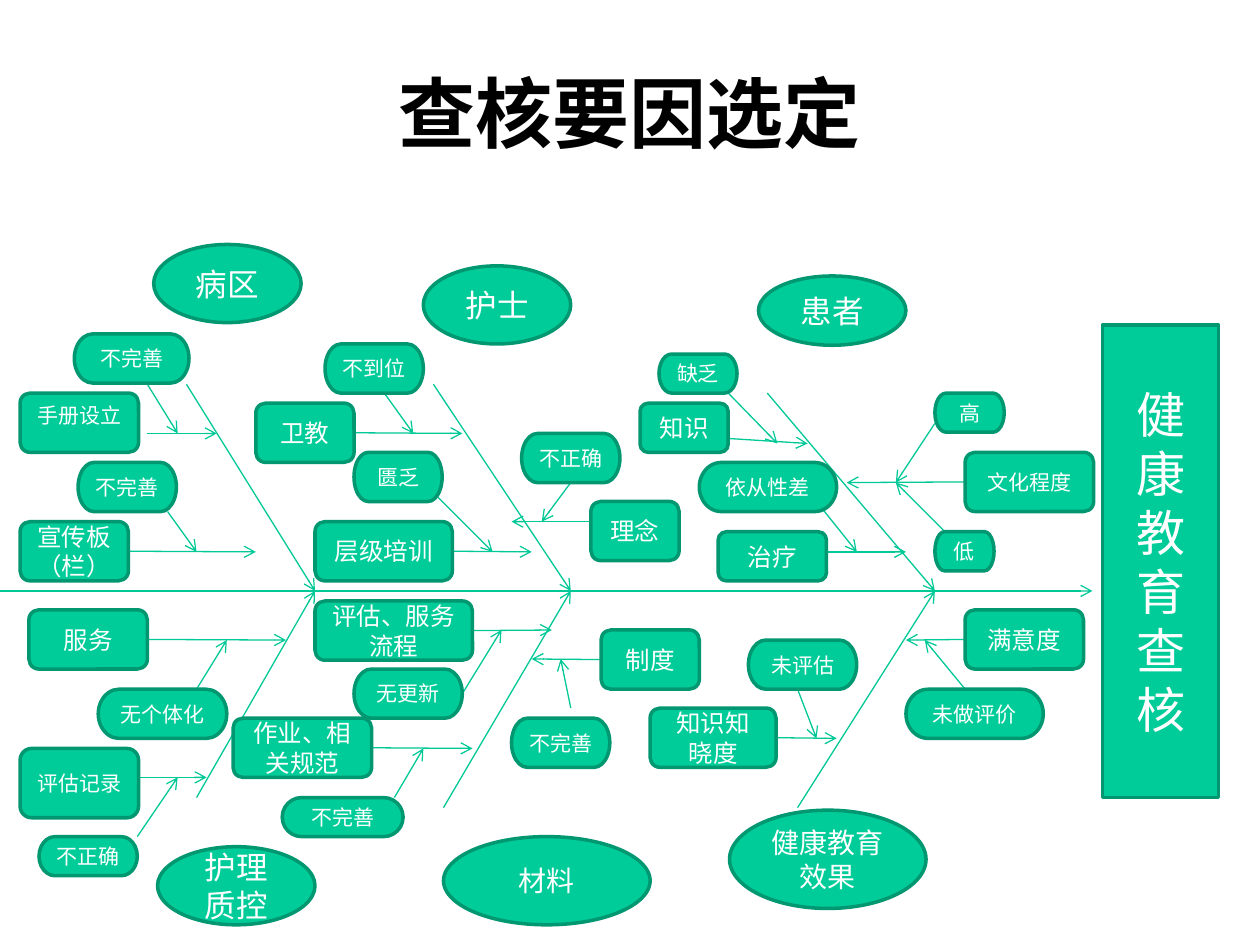
from lxml import etree
from pptx import Presentation
from pptx import util as u
from pptx.dml import color
from pptx.enum import shapes, text
from pptx.oxml import ns

NOTO = "Noto Sans CJK SC"
TIMES = "Times New Roman"
SPINE_Y = 4.69

CATEGORIES = [
    ("患者", (6.02, 2.19, 1.17, 0.55), 18, TIMES, (6.09, 3.12), 7.42),
    ("护士", (3.36, 2.11, 1.17, 0.62), 18, TIMES, (3.44, 3.05), 4.53),
    ("病区", (1.22, 1.94, 1.17, 0.62), 18, NOTO, (1.48, 3.05), 2.5),
    ("健康教育效果", (5.79, 6.43, 1.56, 0.78), 16, NOTO, (6.33, 6.41), 7.42),
    ("材料", (3.52, 6.64, 1.64, 0.7), 16, NOTO, (3.52, 6.41), 4.53),
    ("护理质控", (1.25, 6.72, 1.25, 0.62), 18, NOTO, (1.56, 6.33), 2.5),
]

CAUSES = [
    ("文化程度", (7.66, 3.59, 1.02, 0.47), 12, TIMES, (7.66, 3.83), (6.72, 3.83)),
    ("知识", (5.08, 3.2, 0.7, 0.39), 14, TIMES, (5.78, 3.48), (6.41, 3.52)),
    ("治疗", (5.7, 4.22, 0.86, 0.39), 14, NOTO, (6.56, 4.38), (7.19, 4.38)),
    ("理念", (4.69, 3.98, 0.7, 0.47), 14, TIMES, (4.69, 4.14), (4.06, 4.14)),
    ("层级培训", (2.5, 4.14, 1.09, 0.47), 14, TIMES, (3.59, 4.38), (4.22, 4.38)),
    ("卫教", (2.03, 3.2, 0.78, 0.47), 14, TIMES, (2.81, 3.44), (3.67, 3.44)),
    ("宣传板（栏）", (0.16, 4.14, 0.86, 0.47), 14, NOTO, (1.02, 4.38), (2.03, 4.38)),
    ("手册设立", (0.16, 3.12, 0.94, 0.47), 12, NOTO, (1.17, 3.44), (1.72, 3.44)),
    ("满意度", (7.66, 4.84, 0.94, 0.47), 14, TIMES, (7.66, 5.08), (7.19, 5.08)),
    ("知识知晓度", (5.16, 5.62, 1, 0.47), 14, TIMES, (6.16, 5.86), (6.64, 5.86)),
    ("制度", (4.77, 5, 0.78, 0.47), 14, TIMES, (4.77, 5.24), (4.22, 5.23)),
    ("评估、服务流程", (2.5, 4.77, 1.25, 0.47), 14, TIMES, (3.75, 5), (4.38, 5)),
    ("作业、相关规范", (1.85, 5.7, 1.1, 0.47), 14, NOTO, (2.95, 5.94), (3.75, 5.94)),
    ("服务", (0.23, 4.84, 0.94, 0.47), 14, TIMES, (1.17, 5.08), (2.27, 5.08)),
    ("评估记录", (0.16, 5.94, 0.94, 0.55), 12, TIMES, (1.09, 6.17), (1.64, 6.17)),
]

DETAILS = [
    ("高", (7.42, 3.12, 0.55, 0.31), 12, TIMES, (7.42, 3.36), (7.11, 3.83)),
    ("低", (7.42, 4.22, 0.47, 0.31), 12, TIMES, (7.5, 4.22), (7.11, 3.83)),
    ("缺乏", (5.23, 2.81, 0.62, 0.31), 12, TIMES, (5.78, 3.12), (6.17, 3.52)),
    ("依从性差", (5.55, 3.67, 1.09, 0.39), 12, TIMES, (6.48, 3.98), (6.8, 4.38)),
    ("不正确", (4.14, 3.44, 0.78, 0.39), 12, TIMES, (4.53, 3.83), (4.3, 4.14)),
    ("匮乏", (2.81, 3.59, 0.7, 0.39), 12, TIMES, (3.44, 3.91), (3.91, 4.38)),
    ("不到位", (2.58, 2.73, 0.78, 0.39), 12, TIMES, (3.05, 3.12), (3.28, 3.44)),
    ("不完善", (0.62, 3.67, 0.78, 0.39), 12, NOTO, (1.33, 4.06), (1.56, 4.38)),
    ("不完善", (0.59, 2.65, 0.91, 0.39), 12, NOTO, (1.17, 3.05), (1.41, 3.44)),
    ("未做评价", (7.19, 5.47, 1.09, 0.39), 12, TIMES, (7.66, 5.47), (7.34, 5.08)),
    ("未评估", (5.94, 5.08, 0.86, 0.39), 12, TIMES, (6.33, 5.47), (6.48, 5.86)),
    ("不完善", (4.06, 5.7, 0.78, 0.39), 12, TIMES, (4.53, 5.62), (4.45, 5.23)),
    ("无更新", (2.81, 5.31, 0.86, 0.39), 12, NOTO, (3.67, 5.51), (3.98, 5)),
    ("不完善", (2.24, 6.33, 0.96, 0.31), 12, NOTO, (3.13, 6.33), (3.36, 5.94)),
    ("无个体化", (0.78, 5.47, 1.02, 0.39), 12, TIMES, (1.56, 5.47), (1.8, 5.08)),
    ("不正确", (0.31, 6.64, 0.78, 0.31), 12, TIMES, (1.09, 6.64), (1.41, 6.17)),
]


def rgb(value):
    return color.RGBColor.from_string(value)


class Fishbone:
    fill = "00CC99"
    outline = "009771"
    arrow_color = "00C896"
    label_color = "FFFFFF"
    title_color = "000000"
    tolerance = 0.02

    def __init__(self, slide):
        self.slide = slide

    def label(self, frame, content, size, font, ink, bold=False):
        frame.text = content
        frame.word_wrap = True
        frame.vertical_anchor = text.MSO_ANCHOR.MIDDLE
        for paragraph in frame.paragraphs:
            paragraph.alignment = text.PP_ALIGN.CENTER
            for run in paragraph.runs:
                run.font.size = u.Pt(size)
                run.font.bold = bold
                run.font.color.rgb = rgb(ink)
                run.font.name = font
                east_asian = etree.SubElement(run._r.get_or_add_rPr(), ns.qn("a:ea"))
                east_asian.set("typeface", NOTO)

    def title(self, content, box):
        heading = self.slide.shapes.title
        heading.left, heading.top, heading.width, heading.height = map(u.Inches, box)
        self.label(heading.text_frame, content, 44, NOTO, self.title_color, True)

    def node(self, kind, content, box, size, font):
        node = self.slide.shapes.add_shape(kind, *map(u.Inches, box))
        node.shadow.inherit = False
        node.fill.solid()
        node.fill.fore_color.rgb = rgb(self.fill)
        node.line.color.rgb = rgb(self.outline)
        node.line.width = u.Pt(2)
        self.label(node.text_frame, content, size, font, self.label_color)
        return node

    def arrow(self, start, end):
        arrow = self.slide.shapes.add_connector(
            shapes.MSO_CONNECTOR.STRAIGHT, *map(u.Inches, (*start, *end)))
        arrow.line.color.rgb = rgb(self.arrow_color)
        arrow.line.width = u.Pt(0.75)
        properties = arrow._element.spPr
        etree.SubElement(properties.get_or_add_ln(), ns.qn("a:tailEnd")).set("type", "arrow")
        etree.SubElement(properties, ns.qn("a:effectLst"))
        return arrow

    def branch(self, kind, content, box, size, font, start, end):
        arrow = self.arrow(start, end)
        node = self.node(kind, content, box, size, font)
        left, top, width, height = box
        middle, center = top + height / 2, left + width / 2
        sides = [(center, top), (left, middle), (center, top + height), (left + width, middle)]
        for site, (x, y) in enumerate(sides):
            if max(abs(x - start[0]), abs(y - start[1])) < self.tolerance:
                arrow.begin_connect(node, site)
        return node


def main():
    deck = Presentation()
    deck.slide_width, deck.slide_height = u.Inches(10), u.Inches(7.5)
    diagram = Fishbone(deck.slides.add_slide(deck.slide_layouts[5]))
    preset = shapes.MSO_SHAPE

    diagram.title("查核要因选定", (0.75, 0.36, 8.5, 1.06))
    diagram.arrow((0, SPINE_Y), (8.67, SPINE_Y))
    diagram.node(preset.RECTANGLE, "健康教育\n查核", (8.75, 2.58, 0.92, 3.75), 28, NOTO)

    for category, box, size, font, rib_start, joint_x in CATEGORIES:
        diagram.arrow(rib_start, (joint_x, SPINE_Y))
        diagram.node(preset.OVAL, category, box, size, font)
    for cause in CAUSES:
        node = diagram.branch(preset.ROUNDED_RECTANGLE, *cause)
        if cause[0] == "手册设立":
            node.text_frame.vertical_anchor = text.MSO_ANCHOR.TOP
    for detail in DETAILS:
        diagram.branch(preset.FLOWCHART_TERMINATOR, *detail)

    deck.save("out.pptx")


if __name__ == "__main__":
    main()
